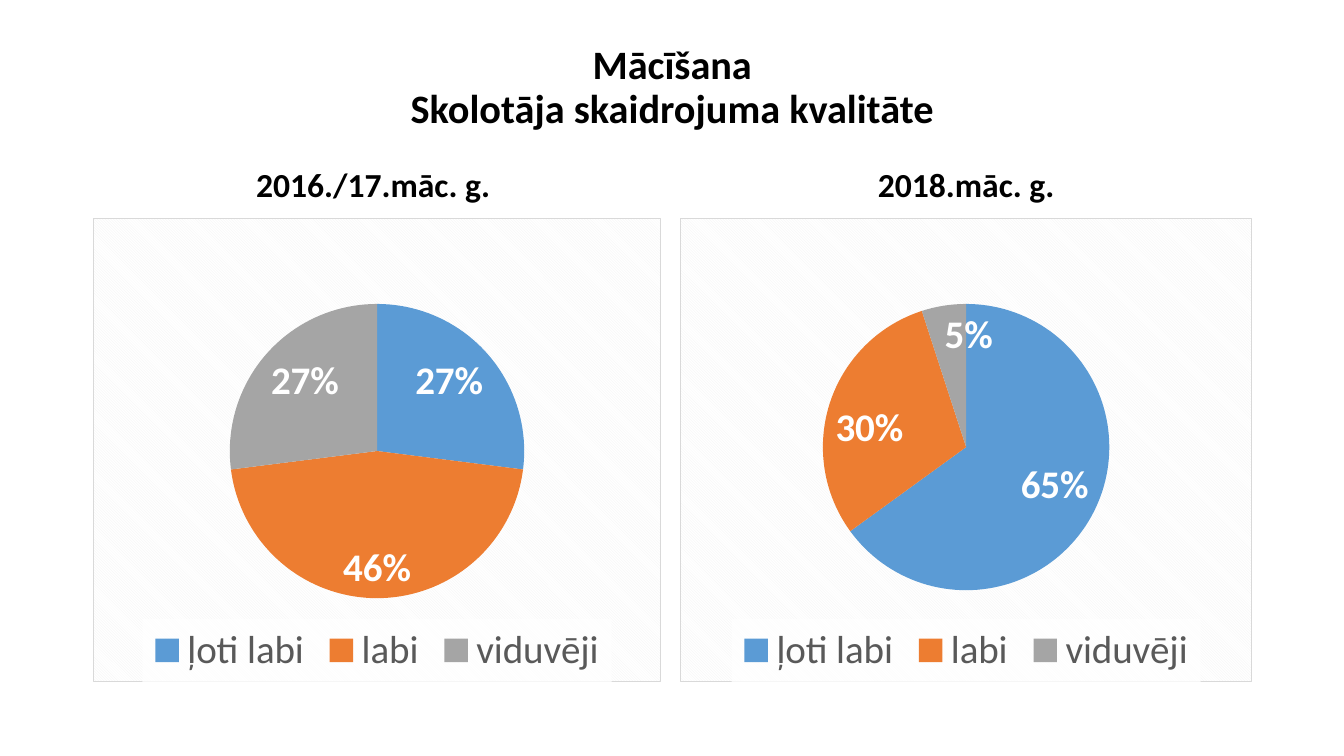
from dataclasses import dataclass

from lxml.etree import fromstring
from pptx import Presentation
from pptx.chart.chart import Chart
from pptx.chart.data import CategoryChartData
from pptx.dml.color import RGBColor
from pptx.enum.chart import XL_CHART_TYPE, XL_LABEL_POSITION, XL_LEGEND_POSITION
from pptx.enum.text import MSO_ANCHOR, PP_ALIGN
from pptx.slide import Slide
from pptx.text.text import Font, TextFrame
from pptx.util import Pt

FACE = "Calibri"
NAMES = ("ļoti labi", "labi", "viduvēji")
HUES = ("5B9BD5", "ED7D31", "A5A5A5")
SPACES = (
    'xmlns:c="http://schemas.openxmlformats.org/drawingml/2006/chart" '
    'xmlns:a="http://schemas.openxmlformats.org/drawingml/2006/main"'
)
HEAD_TOP, HEAD_HIGH = 102.24, 47.52
PIE_TOP, PIE_HIGH = 155.52, 331.92
PLOT_TOP = 0.185


@dataclass
class Panel:
    head: str
    left: float
    width: float
    side: float
    shares: tuple[int, ...]


PANELS = (
    Panel("2016./17.māc. g. ", 66.24, 406.08, 210.7, (27, 46, 27)),
    Panel("2018.māc. g.", 486, 408.24, 205, (65, 30, 5)),
)


def paint(code: str) -> RGBColor:
    return RGBColor.from_string(code)


def style(font: Font, size: float, code: str, bold: bool = False) -> None:
    font.name = FACE
    font.size = Pt(size)
    font.bold = bold
    font.color.rgb = paint(code)


def write(frame: TextFrame, lines: tuple[str, ...], size: float,
          anchor: MSO_ANCHOR, before: float = 0) -> None:
    frame.word_wrap = True
    frame.vertical_anchor = anchor
    para = frame.paragraphs[0]
    para.alignment = PP_ALIGN.CENTER
    para.line_spacing = 0.9
    para.space_before = Pt(before)
    for index, line in enumerate(lines):
        if index:
            para.add_line_break()
        run = para.add_run()
        run.text = line
        style(run.font, size, "000000", True)


def frame_pie(chart: Chart, panel: Panel) -> None:
    space = chart.element
    body = space.find("{*}chart")
    body.addnext(fromstring(
        f'<c:spPr {SPACES}><a:pattFill prst="dkDnDiag">'
        '<a:fgClr><a:srgbClr val="F2F2F2"/></a:fgClr>'
        '<a:bgClr><a:srgbClr val="FFFFFF"/></a:bgClr></a:pattFill>'
        '<a:ln w="9525"><a:solidFill><a:srgbClr val="D9D9D9"/></a:solidFill></a:ln>'
        '</c:spPr>'
    ))
    wide, high = panel.side / panel.width, panel.side / PIE_HIGH
    spots = {"x": (1 - wide) / 2, "y": PLOT_TOP, "w": wide, "h": high}
    parts = "".join(f'<c:{key} val="{val:.4f}"/>' for key, val in spots.items())
    area = body.find("{*}plotArea")
    for old in area.findall("{*}layout"):
        area.remove(old)
    area.insert(0, fromstring(
        f'<c:layout {SPACES}><c:manualLayout><c:layoutTarget val="inner"/>'
        f'<c:xMode val="edge"/><c:yMode val="edge"/>{parts}'
        '</c:manualLayout></c:layout>'
    ))
    body.find("{*}legend/{*}txPr").addprevious(fromstring(
        f'<c:spPr {SPACES}><a:solidFill><a:srgbClr val="FFFFFF">'
        '<a:alpha val="78000"/></a:srgbClr></a:solidFill></c:spPr>'
    ))


def draw_pie(slide: Slide, panel: Panel) -> None:
    data = CategoryChartData()
    data.categories = NAMES
    data.add_series("Series 1", panel.shares)
    chart = slide.shapes.add_chart(
        XL_CHART_TYPE.PIE, Pt(panel.left), Pt(PIE_TOP),
        Pt(panel.width), Pt(PIE_HIGH), data,
    ).chart
    style(chart.font, 10, "000000")
    chart.has_title = False
    chart.has_legend = True
    chart.legend.position = XL_LEGEND_POSITION.BOTTOM
    chart.legend.include_in_layout = False
    style(chart.legend.font, 28, "595959")

    plot = chart.plots[0]
    plot.vary_by_categories = True
    for index, hue in enumerate(HUES):
        look = plot.series[0].points[index].format
        look.fill.solid()
        look.fill.fore_color.rgb = paint(hue)
        look.line.fill.background()
    plot.has_data_labels = True
    labels = plot.data_labels
    labels.show_percentage = True
    labels.show_value = False
    labels.number_format = "0%"
    labels.number_format_is_linked = False
    labels.position = XL_LABEL_POSITION.INSIDE_END
    style(labels.font, 28, "FFFFFF", True)
    frame_pie(chart, panel)


def draw_panel(slide: Slide, panel: Panel) -> None:
    box = slide.shapes.add_textbox(
        Pt(panel.left), Pt(HEAD_TOP), Pt(panel.width), Pt(HEAD_HIGH)
    )
    write(box.text_frame, (panel.head,), 24, MSO_ANCHOR.BOTTOM, 10)
    draw_pie(slide, panel)


def main() -> None:
    deck = Presentation()
    deck.slide_width, deck.slide_height = Pt(960), Pt(540)
    slide = deck.slides.add_slide(deck.slide_layouts[5])
    title = slide.shapes.title
    title.left, title.top = Pt(66.24), Pt(28.8)
    title.width, title.height = Pt(828), Pt(68.4)
    write(title.text_frame, ("Mācīšana", "Skolotāja skaidrojuma kvalitāte"),
          28.8, MSO_ANCHOR.MIDDLE)
    for panel in PANELS:
        draw_panel(slide, panel)
    deck.save("out.pptx")


if __name__ == "__main__":
    main()
